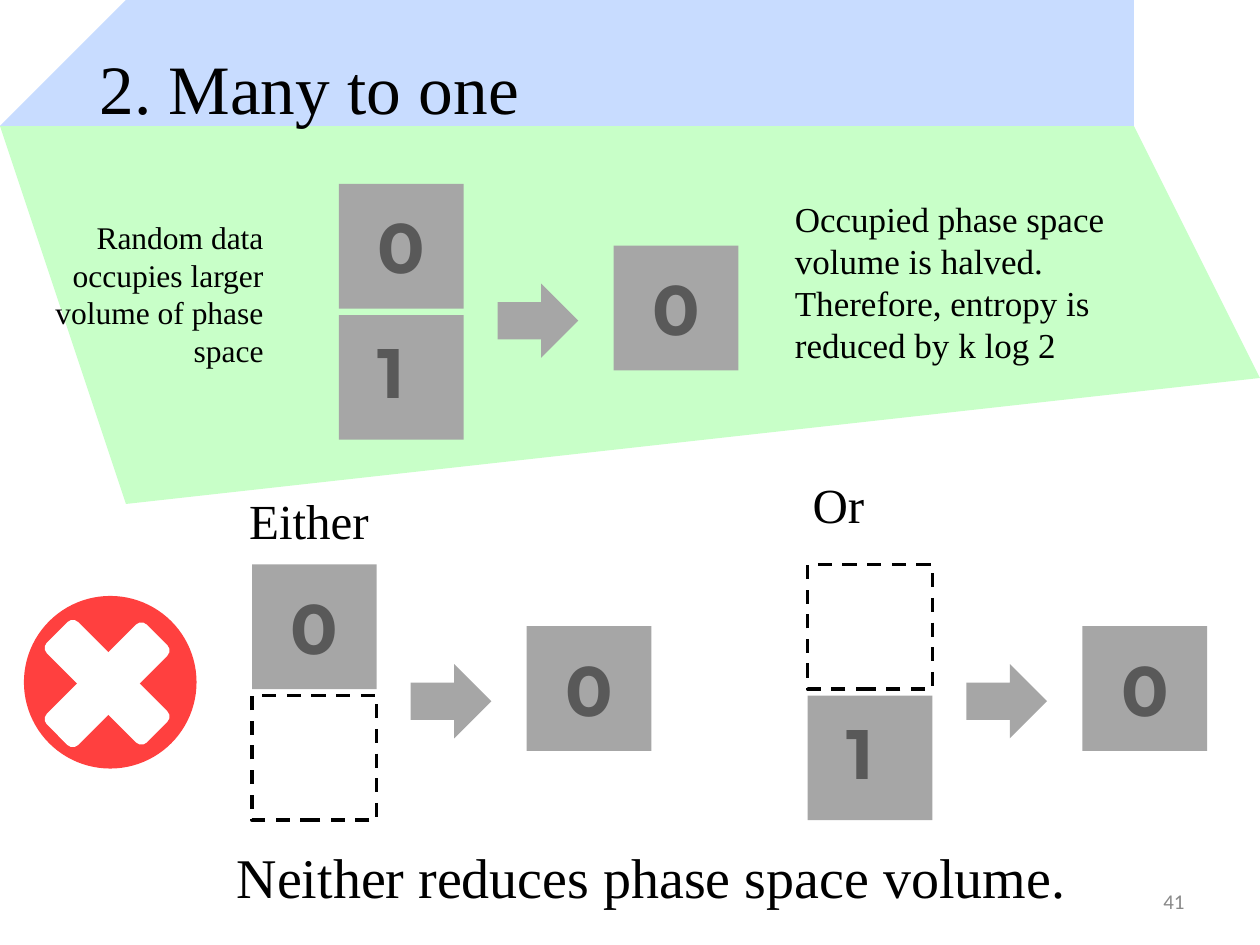
from dataclasses import dataclass
from typing import Any, Optional

import pptx
import pptx.dml.color
import pptx.enum.dml
import pptx.enum.shapes
import pptx.enum.text
import pptx.util

Inches = pptx.util.Inches
SHAPE = pptx.enum.shapes.MSO_SHAPE
ALIGN = pptx.enum.text.PP_ALIGN
ANCHOR = pptx.enum.text.MSO_ANCHOR
AUTO = pptx.enum.text.MSO_AUTO_SIZE


@dataclass(frozen=True)
class Theme:
    body: str = "Times New Roman"
    digit: str = "Montserrat"
    number: str = "Calibri"
    black: str = "000000"
    white: str = "FFFFFF"
    gray: str = "A6A6A6"
    dark: str = "595959"
    muted: str = "898989"
    red: str = "FF403F"
    green: str = "C8FFC8"
    blue: str = "C8DCFF"
    title_size: float = 39.6
    digit_size: float = 40
    closing_size: float = 32
    label_size: float = 28
    result_size: float = 20
    note_size: float = 18
    number_size: float = 12


@dataclass(frozen=True)
class Box:
    x: float
    y: float
    w: float
    h: float


@dataclass(frozen=True)
class Mapping:
    x: float
    y: float
    upper: Optional[str]
    lower: Optional[str]
    label: str = ""
    label_box: Optional[Box] = None


THEME = Theme()
CELL = 0.99
ROW_STEP = 1.04
DIGIT_DX = 0.21
DIGIT_DY = {"0": 0.11, "1": 0.06}

MAPPINGS = [
    Mapping(2.69, 1.46, "0", "1"),
    Mapping(2, 4.48, "0", None, "Either", Box(1.88, 3.84, 1.16, 0.57)),
    Mapping(6.41, 4.48, None, "1", "Or", Box(6.35, 3.72, 0.62, 0.57)),
]


def rgb(color: str) -> pptx.dml.color.RGBColor:
    return pptx.dml.color.RGBColor.from_string(color)


def add_text(shapes: Any, text: str, box: Box, *, size: float, font: str = THEME.body,
             color: str = THEME.black, bold: bool = False, align: Any = ALIGN.LEFT,
             anchor: Any = ANCHOR.TOP, wrap: bool = True, grow: bool = True) -> None:
    sp = shapes.add_textbox(Inches(box.x), Inches(box.y), Inches(box.w), Inches(box.h))
    tf = sp.text_frame
    tf.word_wrap = wrap
    tf.auto_size = AUTO.SHAPE_TO_FIT_TEXT if grow else AUTO.NONE
    tf.vertical_anchor = anchor
    p = tf.paragraphs[0]
    p.text = text
    p.alignment = align
    for r in p.runs:
        r.font.name = font
        r.font.size = pptx.util.Pt(size)
        r.font.bold = bold
        r.font.color.rgb = rgb(color)


def paint(sp: Any, fill: str) -> None:
    sp.shadow.inherit = False
    sp.fill.solid()
    sp.fill.fore_color.rgb = rgb(fill)
    sp.line.fill.background()


def add_shape(shapes: Any, kind: Any, box: Box, fill: str, rotation: float = 0) -> Any:
    sp = shapes.add_shape(kind, Inches(box.x), Inches(box.y), Inches(box.w), Inches(box.h))
    sp.rotation = rotation
    paint(sp, fill)
    return sp


def add_banner(shapes: Any, points: list[tuple[float, float]], fill: str) -> None:
    fb = shapes.build_freeform(*points[0], scale=Inches(1))
    fb.add_line_segments(points[1:], close=True)
    paint(fb.convert_to_shape(), fill)


def add_cell(shapes: Any, x: float, y: float, digit: Optional[str]) -> None:
    fill = THEME.gray if digit else THEME.white
    sp = add_shape(shapes, SHAPE.RECTANGLE, Box(x, y, CELL, CELL), fill)
    if digit:
        add_text(shapes, digit, Box(x + DIGIT_DX, y + DIGIT_DY[digit], 0.58, 0.77),
                 size=THEME.digit_size, font=THEME.digit, color=THEME.dark,
                 bold=True, wrap=False)
    else:
        sp.line.color.rgb = rgb(THEME.black)
        sp.line.width = pptx.util.Pt(2)
        sp.line.dash_style = pptx.enum.dml.MSO_LINE.DASH


def add_mapping(shapes: Any, m: Mapping) -> None:
    group = shapes.add_group_shape().shapes
    add_cell(group, m.x, m.y, m.upper)
    add_cell(group, m.x, m.y + ROW_STEP, m.lower)
    add_cell(group, m.x + 2.18, m.y + 0.49, "0")
    add_shape(group, SHAPE.RIGHT_ARROW, Box(m.x + 1.26, m.y + 0.79, 0.64, 0.59), THEME.gray)
    if m.label_box:
        add_text(group, m.label, m.label_box, size=THEME.label_size, wrap=False)


def add_cross(shapes: Any) -> None:
    group = shapes.add_group_shape().shapes
    add_shape(group, SHAPE.OVAL, Box(0.19, 4.73, 1.37, 1.37), THEME.red)
    for y, rotation in ((5.26, 315), (5.24, 45)):
        add_shape(group, SHAPE.ROUNDED_RECTANGLE, Box(0.29, y, 1.12, 0.35),
                  THEME.white, rotation)


def main() -> None:
    prs = pptx.Presentation()
    prs.slide_width, prs.slide_height = Inches(10), Inches(7.5)
    s = prs.slides.add_slide(prs.slide_layouts[6])
    shapes = s.shapes

    add_banner(shapes, [(0.27, 1.48), (9.45, 1.38), (9.58, 3.01), (0.55, 3.53)], THEME.green)
    add_banner(shapes, [(0.67, 0.22), (8.97, 0.45), (9.02, 0.8), (0.38, 1.09)], THEME.blue)
    add_text(shapes, "2. Many to one", Box(0.69, 0.31, 8.62, 0.76),
             size=THEME.title_size, anchor=ANCHOR.MIDDLE, grow=False)
    add_text(shapes, "41", Box(7.17, 6.95, 2.33, 0.4), size=THEME.number_size,
             font=THEME.number, color=THEME.muted, align=ALIGN.RIGHT,
             anchor=ANCHOR.MIDDLE, grow=False)
    add_text(shapes, "Random data occupies larger volume of phase space",
             Box(0.27, 1.68, 1.92, 1.31), size=THEME.note_size, align=ALIGN.RIGHT)
    add_text(shapes, "Occupied phase space volume is halved.\n"
             "Therefore, entropy is reduced by k log 2",
             Box(6.21, 1.52, 3.42, 1.45), size=THEME.result_size)
    add_cross(shapes)
    for m in MAPPINGS:
        add_mapping(shapes, m)
    add_text(shapes, "Neither reduces phase space volume.", Box(1.78, 6.64, 6.85, 0.64),
             size=THEME.closing_size, wrap=False)

    prs.save("out.pptx")


if __name__ == "__main__":
    main()
